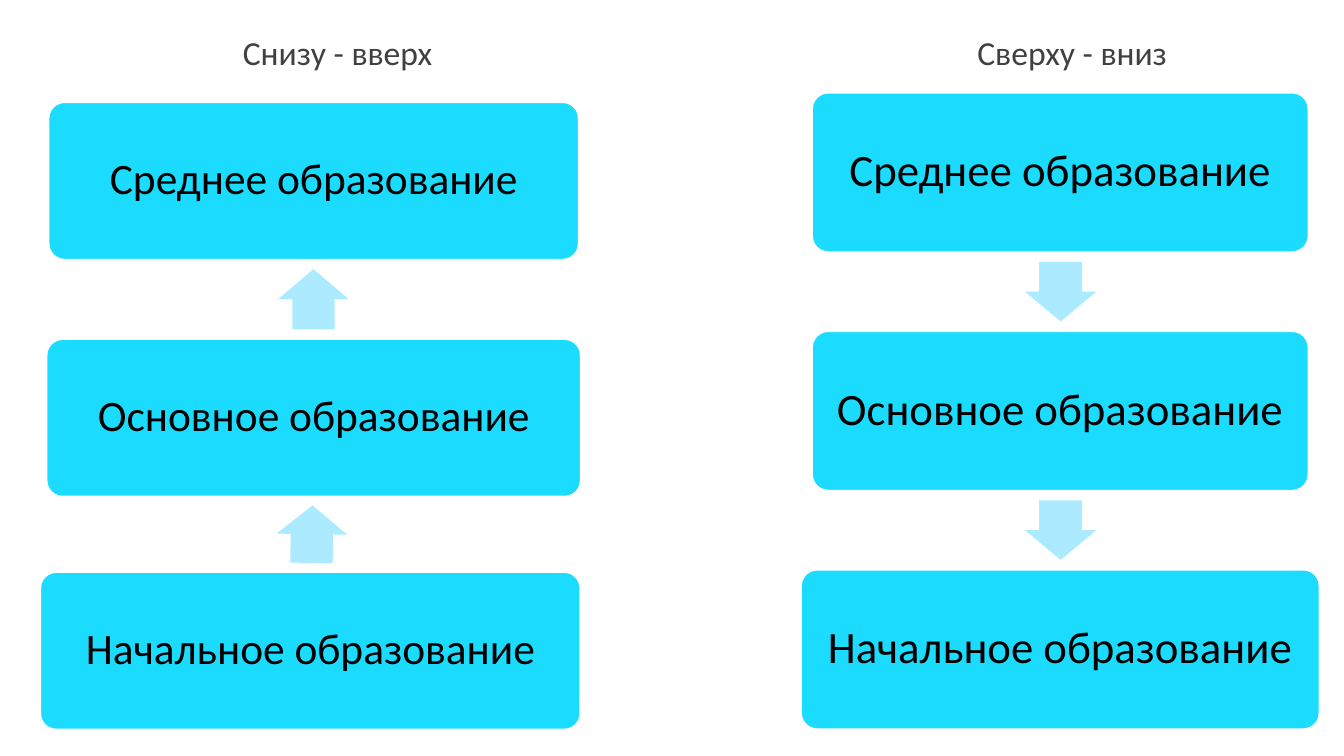
from pptx import Presentation
from pptx.dml.color import RGBColor
from pptx.enum.shapes import MSO_SHAPE
from pptx.enum.text import MSO_ANCHOR, MSO_AUTO_SIZE, PP_ALIGN
from pptx.util import Cm, Pt

LEVELS = ("Среднее образование", "Основное образование", "Начальное образование")


def rgb(value):
    return RGBColor.from_string(value)


def write(frame, text, size, color, align=PP_ALIGN.LEFT, line_spacing=None, space_after=None):
    paragraph = frame.paragraphs[0]
    paragraph.alignment = align
    paragraph.line_spacing = line_spacing
    paragraph.space_after = space_after
    run = paragraph.add_run()
    run.text = text
    run.font.name = "Calibri"
    run.font.size = Pt(size)
    run.font.color.rgb = rgb(color)


def add_heading(slide, text, left):
    heading = slide.shapes.add_textbox(Cm(left), Cm(0.69), Cm(5.33), Cm(1.27))
    heading.text_frame.word_wrap = False
    heading.text_frame.auto_size = MSO_AUTO_SIZE.SHAPE_TO_FIT_TEXT
    write(heading.text_frame, text, 24, "404040")


def add_level(slide, text, left, top, width, height, size):
    level = slide.shapes.add_shape(
        MSO_SHAPE.ROUNDED_RECTANGLE, Cm(left), Cm(top), Cm(width), Cm(height))
    level.adjustments[0] = 0.1
    level.shadow.inherit = False
    level.fill.solid()
    level.fill.fore_color.rgb = rgb("1BDCFF")
    level.line.color.rgb = rgb("FFFFFF")
    level.line.width = Pt(1)
    frame = level.text_frame
    frame.word_wrap = True
    frame.vertical_anchor = MSO_ANCHOR.MIDDLE
    frame.margin_left = frame.margin_right = Cm(0.45)
    frame.margin_top = frame.margin_bottom = Cm(0.45)
    write(frame, text, size, "000000", align=PP_ALIGN.CENTER,
          line_spacing=0.9, space_after=Pt(size * 0.35))


def add_arrow(slide, center_x, center_y, length, breadth, rotation):
    """Draw a right arrow turned about its centre."""
    arrow = slide.shapes.add_shape(
        MSO_SHAPE.RIGHT_ARROW, Cm(center_x - length / 2), Cm(center_y - breadth / 2),
        Cm(length), Cm(breadth))
    arrow.adjustments[0] = 0.6
    arrow.adjustments[1] = 0.5
    arrow.rotation = rotation
    arrow.shadow.inherit = False
    arrow.fill.solid()
    arrow.fill.fore_color.rgb = rgb("ACEBFF")
    arrow.line.fill.background()


def add_column(slide, heading, heading_left, boxes, height, size, arrows):
    """Stack the levels; boxes are (left, top, width), arrows follow add_arrow."""
    for text, (left, top, width) in zip(LEVELS, boxes):
        add_level(slide, text, left, top, width, height, size)
    for arrow in arrows:
        add_arrow(slide, *arrow)
    add_heading(slide, heading, heading_left)


def main():
    presentation = Presentation()
    presentation.slide_width = Cm(33.87)
    presentation.slide_height = Cm(19.05)
    slide = presentation.slides.add_slide(presentation.slide_layouts[6])

    add_column(
        slide, "Снизу - вверх", 5.87,
        boxes=[(1.23, 2.58, 13.35), (1.18, 8.55, 13.45), (1.02, 14.42, 13.6)],
        height=3.96, size=31,
        arrows=[(7.9, 7.54, 1.52, 1.78, 270), (7.86, 13.46, 1.45, 1.78, 270.9)])
    add_column(
        slide, "Сверху - вниз", 24.38,
        boxes=[(20.47, 2.34, 12.5), (20.47, 8.35, 12.5), (20.19, 14.36, 13.06)],
        height=4.01, size=32,
        arrows=[(26.73, 7.35, 1.5, 1.8, 90), (26.73, 13.36, 1.5, 1.8, 90)])

    presentation.save("out.pptx")


if __name__ == "__main__":
    main()
